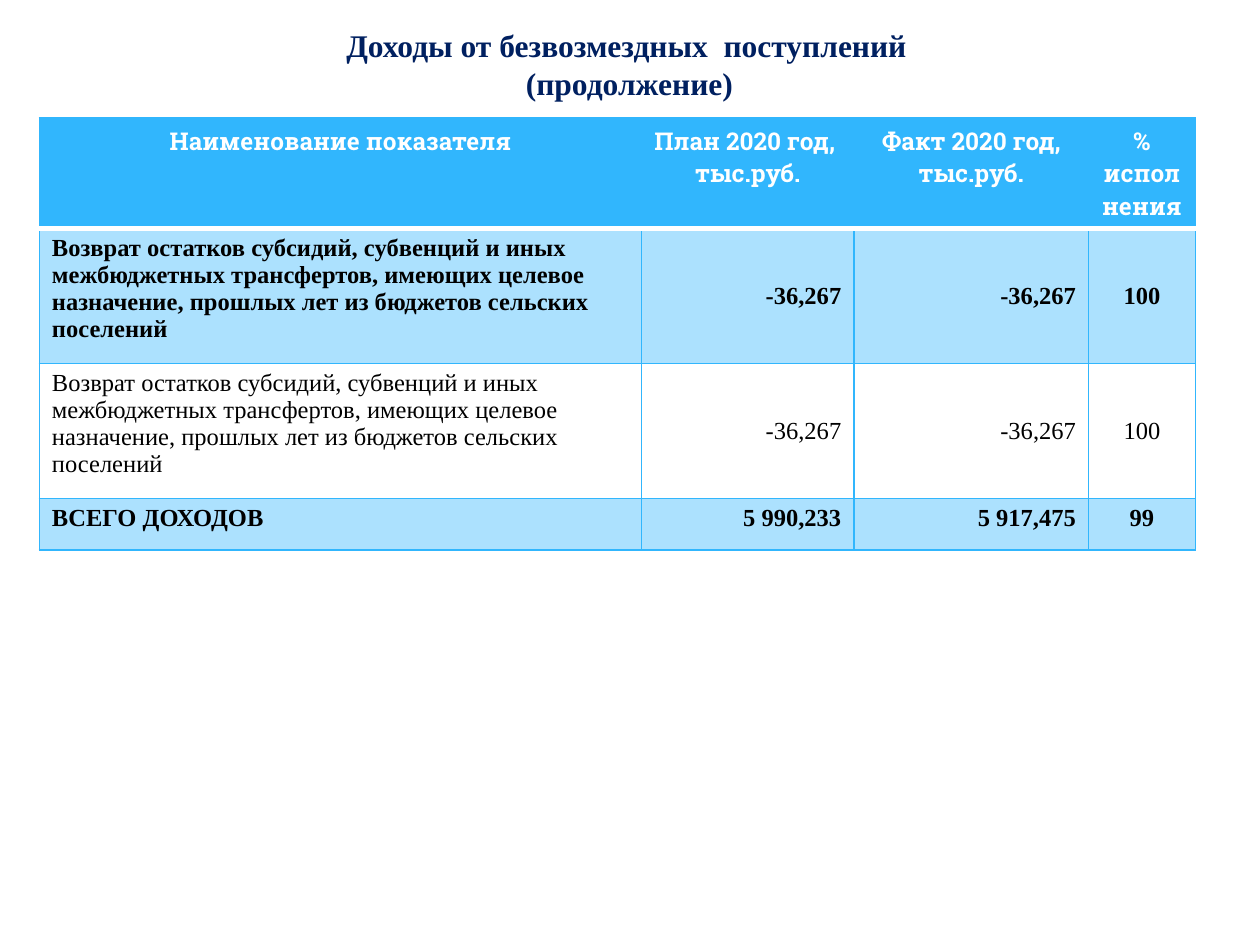
from dataclasses import dataclass

from lxml import etree
from pptx import Presentation
from pptx.dml.color import RGBColor
from pptx.enum.text import MSO_ANCHOR, PP_ALIGN
from pptx.oxml.ns import qn
from pptx.util import Pt

LEFT, CENTER, RIGHT = PP_ALIGN.LEFT, PP_ALIGN.CENTER, PP_ALIGN.RIGHT
TOP, MIDDLE = MSO_ANCHOR.TOP, MSO_ANCHOR.MIDDLE


@dataclass(frozen=True)
class Theme:
    blue: str = "31B6FD"
    navy: str = "002060"
    white: str = "FFFFFF"
    black: str = "000000"
    title_size: int = 18
    table_size: int = 14
    body_font: str = "Times New Roman"
    header_font: str = "Roboto Slab"
    band_opacity: int = 40


THEME = Theme()

RETURNED = ("Возврат остатков субсидий, субвенций и иных межбюджетных трансфертов, "
            "имеющих целевое назначение, прошлых лет из бюджетов сельских поселений")
HEADER = ("Наименование показателя", "План 2020 год,  тыс.руб.",
          "Факт 2020 год, тыс.руб.", "% исполнения")
# Values, bold and banded, anchor of the figures
BODY = (
    ((RETURNED, "-36,267", "-36,267", "100"), True, MIDDLE),
    ((RETURNED, "-36,267", "-36,267", "100"), False, MIDDLE),
    (("ВСЕГО ДОХОДОВ", "5 990,233", "5 917,475", "99"), True, TOP),
)
ALIGNMENTS = (LEFT, RIGHT, RIGHT, CENTER)
COLUMN_WIDTHS = (344.2, 121.3, 134.1, 61)
ROW_HEIGHTS = (60, 77.2, 77.2, 29.5)


def write_text(paragraph, text, *, size, color, font=THEME.body_font,
               bold=False, align=LEFT):
    paragraph.alignment = align
    run = paragraph.add_run()
    run.text = text
    run.font.name = font
    run.font.size = Pt(size)
    run.font.bold = bold
    run.font.color.rgb = RGBColor.from_string(color)


def fill_cell(cell, color, opacity=100):
    if color is None:
        cell.fill.background()
        return
    cell.fill.solid()
    cell.fill.fore_color.rgb = RGBColor.from_string(color)
    if opacity < 100:
        color_element = cell._tc.tcPr.find(".//" + qn("a:srgbClr"))
        etree.SubElement(color_element, qn("a:alpha"), val=str(opacity * 1000))


def border_cell(cell, **special):
    """Blue 1 pt borders, except the sides given as side=(color, width)."""
    properties = cell._tc.get_or_add_tcPr()
    for position, side in enumerate("LRTB"):
        color, width = special.get(side, (THEME.blue, 1))
        line = etree.Element(qn("a:ln" + side), w=str(Pt(width)))
        solid = etree.SubElement(line, qn("a:solidFill"))
        etree.SubElement(solid, qn("a:srgbClr"), val=color)
        properties.insert(position, line)


def add_title(slide, left, top, width, height):
    frame = slide.shapes.add_textbox(Pt(left), Pt(top), Pt(width), Pt(height)).text_frame
    frame.word_wrap = True
    style = dict(size=THEME.title_size, color=THEME.navy, bold=True)
    write_text(frame.paragraphs[0], "Доходы от безвозмездных  поступлений", **style)
    write_text(frame.add_paragraph(), "(продолжение)", align=CENTER, **style)


def add_income_table(slide, left, top, width, height):
    table = slide.shapes.add_table(len(ROW_HEIGHTS), len(COLUMN_WIDTHS), Pt(left),
                                   Pt(top), Pt(width), Pt(height)).table
    for column, column_width in zip(table.columns, COLUMN_WIDTHS):
        column.width = Pt(column_width)
    for row, row_height in zip(table.rows, ROW_HEIGHTS):
        row.height = Pt(row_height)

    # Header row, parted from the body by a thick white line
    divider = (THEME.white, 3)
    for cell, text in zip(table.rows[0].cells, HEADER):
        write_text(cell.text_frame.paragraphs[0], text, size=THEME.table_size,
                   color=THEME.white, font=THEME.header_font, bold=True, align=CENTER)
        fill_cell(cell, THEME.blue)
        border_cell(cell, B=divider)

    # Body rows
    for row_index, (values, banded, anchor) in enumerate(BODY, start=1):
        for column_index, (text, align) in enumerate(zip(values, ALIGNMENTS)):
            cell = table.cell(row_index, column_index)
            write_text(cell.text_frame.paragraphs[0], text, size=THEME.table_size,
                       color=THEME.black, bold=banded, align=align)
            cell.vertical_anchor = anchor if column_index else TOP
            fill_cell(cell, THEME.blue if banded else None, THEME.band_opacity)
            border_cell(cell, **({"T": divider} if row_index == 1 else {}))


def main():
    presentation = Presentation()
    presentation.slide_width, presentation.slide_height = Pt(720), Pt(540)
    slide = presentation.slides.add_slide(presentation.slide_layouts[6])
    add_income_table(slide, 22.5, 67.5, sum(COLUMN_WIDTHS), sum(ROW_HEIGHTS))
    add_title(slide, 190.8, 11.5, 337.7, 51)
    presentation.save("out.pptx")


if __name__ == "__main__":
    main()
